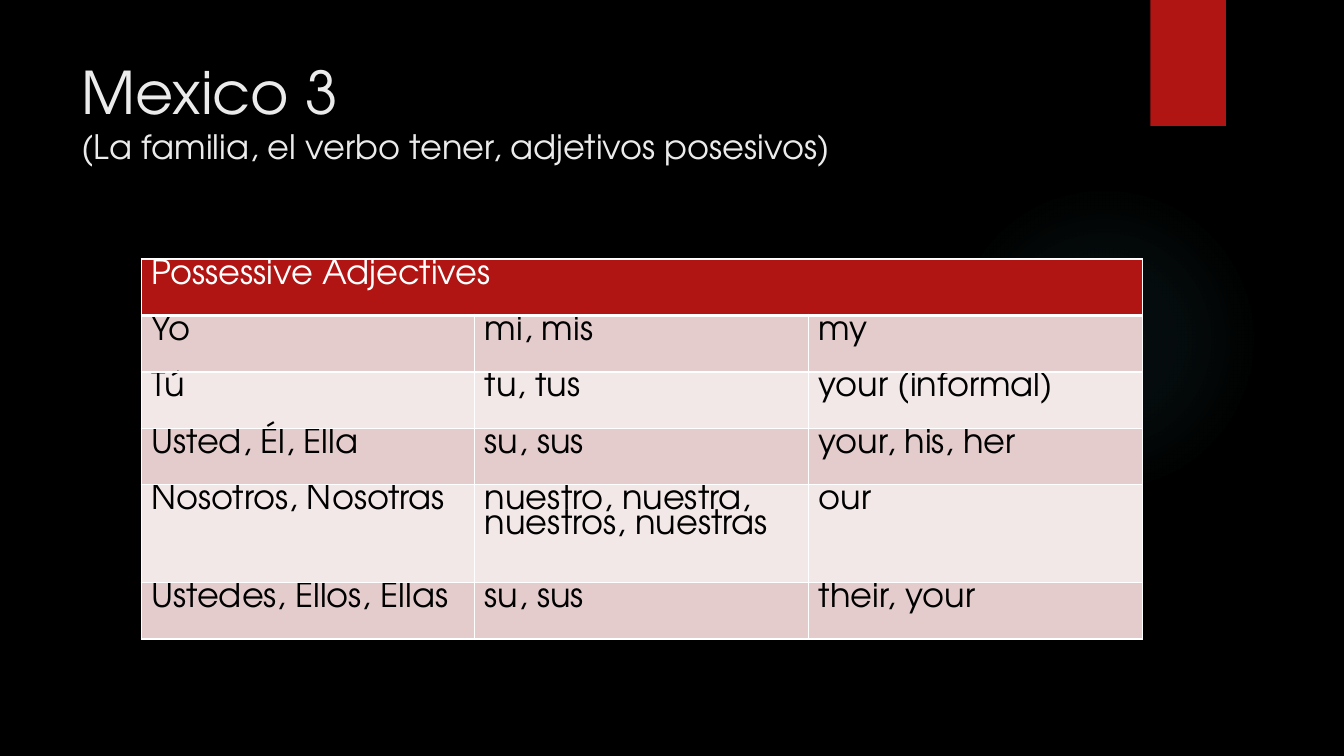
from lxml import etree
from pptx import Presentation
from pptx.dml.color import RGBColor
from pptx.enum.shapes import MSO_SHAPE
from pptx.enum.text import MSO_ANCHOR
from pptx.oxml import parse_xml
from pptx.oxml.ns import qn
from pptx.util import Inches, Pt

RECT, OVAL = MSO_SHAPE.RECTANGLE, MSO_SHAPE.OVAL
TOP = MSO_ANCHOR.TOP
FONT = "TeX Gyre Adventor"
NS = 'xmlns:a="http://schemas.openxmlformats.org/drawingml/2006/main"'
C = {"bg": "000000", "red": "B01513", "glow": "50B9C1", "title": "EBEBEB",
     "white": "FFFFFF", "text": "000000", "dark": "E4CCCC", "light": "F2E8E7"}


def add_run(p, text, size, color):
    r = p.add_run()
    r.text = text
    r.font.name, r.font.size = FONT, Pt(size)
    r.font.color.rgb = RGBColor.from_string(C[color])


def set_border(cell, side, width):
    ln = etree.SubElement(cell._tc.get_or_add_tcPr(), qn(f"a:{side}"), w=str(Pt(width)))
    fill = etree.SubElement(ln, qn("a:solidFill"))
    etree.SubElement(fill, qn("a:srgbClr"), val=C["white"])


prs = Presentation()
prs.slide_width, prs.slide_height = Inches(13.33), Inches(7.5)
s = prs.slides.add_slide(prs.slide_layouts[5])
s.background.fill.solid()
s.background.fill.fore_color.rgb = RGBColor.from_string(C["bg"])

# Soft round glow
glow = s.shapes.add_shape(OVAL, Inches(9.41), Inches(1.83), Inches(3.08), Inches(3.08))
glow.shadow.inherit = False
glow.line.fill.background()
stops = "".join(
    f'<a:gs pos="{pos * 1000}"><a:srgbClr val="{C["glow"]}">'
    f'<a:alpha val="{alpha * 1000}"/></a:srgbClr></a:gs>'
    for pos, alpha in [(0, 7), (36, 6), (69, 0)])
glow._element.spPr.find(qn("a:prstGeom")).addnext(parse_xml(
    f'<a:gradFill {NS}><a:gsLst>{stops}</a:gsLst><a:path path="circle">'
    '<a:fillToRect l="50000" t="50000" r="50000" b="50000"/></a:path></a:gradFill>'))

# Red tab
tab = s.shapes.add_shape(RECT, Inches(11.41), 0, Inches(0.75), Inches(1.25))
tab.fill.solid()
tab.fill.fore_color.rgb = RGBColor.from_string(C["red"])
tab.line.fill.background()
tab.shadow.inherit = False
tab._element.spPr.find(qn("a:effectLst")).append(parse_xml(
    f'<a:outerShdw {NS} blurRad="{Pt(3)}" dist="{Pt(2)}" dir="5400000" rotWithShape="0">'
    f'<a:srgbClr val="{C["bg"]}"><a:alpha val="45000"/></a:srgbClr></a:outerShdw>'))

# Title
title = s.shapes.title
title.left, title.top = Inches(0.71), Inches(0.5)
title.width, title.height = Inches(10.29), Inches(1.53)
tf = title.text_frame
tf.word_wrap = True
tf.vertical_anchor = TOP
p = tf.paragraphs[0]
p.alignment = 1
add_run(p, "Mexico 3", 42, "title")
p.add_line_break()
add_run(p, "(La familia, el verbo tener, adjetivos posesivos)", 24, "title")

# Table of adjectives
rows = [
    ("Possessive Adjectives", "", ""),
    ("Yo", "mi, mis", "my"),
    ("Tú", "tu, tus", "your (informal)"),
    ("Usted, Él, Ella", "su, sus", "your, his, her"),
    ("Nosotros, Nosotras", "nuestro, nuestra, nuestros, nuestras", "our"),
    ("Ustedes, Ellos, Ellas", "su, sus", "their, your"),
]
heights = [0.56, 0.56, 0.56, 0.56, 0.97, 0.56]
table = s.shapes.add_table(len(rows), 3, Inches(1.4), Inches(2.57),
                           Inches(9.93), Inches(sum(heights))).table
for col in table.columns:
    col.width = Inches(3.31)
for i, (row, height) in enumerate(zip(rows, heights)):
    table.rows[i].height = Inches(height)
    fill = "red" if i == 0 else "dark" if i % 2 else "light"
    for j, text in enumerate(row):
        cell = table.cell(i, j)
        for side in ("lnL", "lnR", "lnT", "lnB"):
            heavy = (i, side) in [(0, "lnB"), (1, "lnT")]
            set_border(cell, side, 3 if heavy else 1)
        cell.fill.solid()
        cell.fill.fore_color.rgb = RGBColor.from_string(C[fill])
        if text:
            p = cell.text_frame.paragraphs[0]
            p.line_spacing = 0.8
            add_run(p, text, 24, "text" if i else "white")
table.cell(0, 0).merge(table.cell(0, 2))

prs.save("out.pptx")
